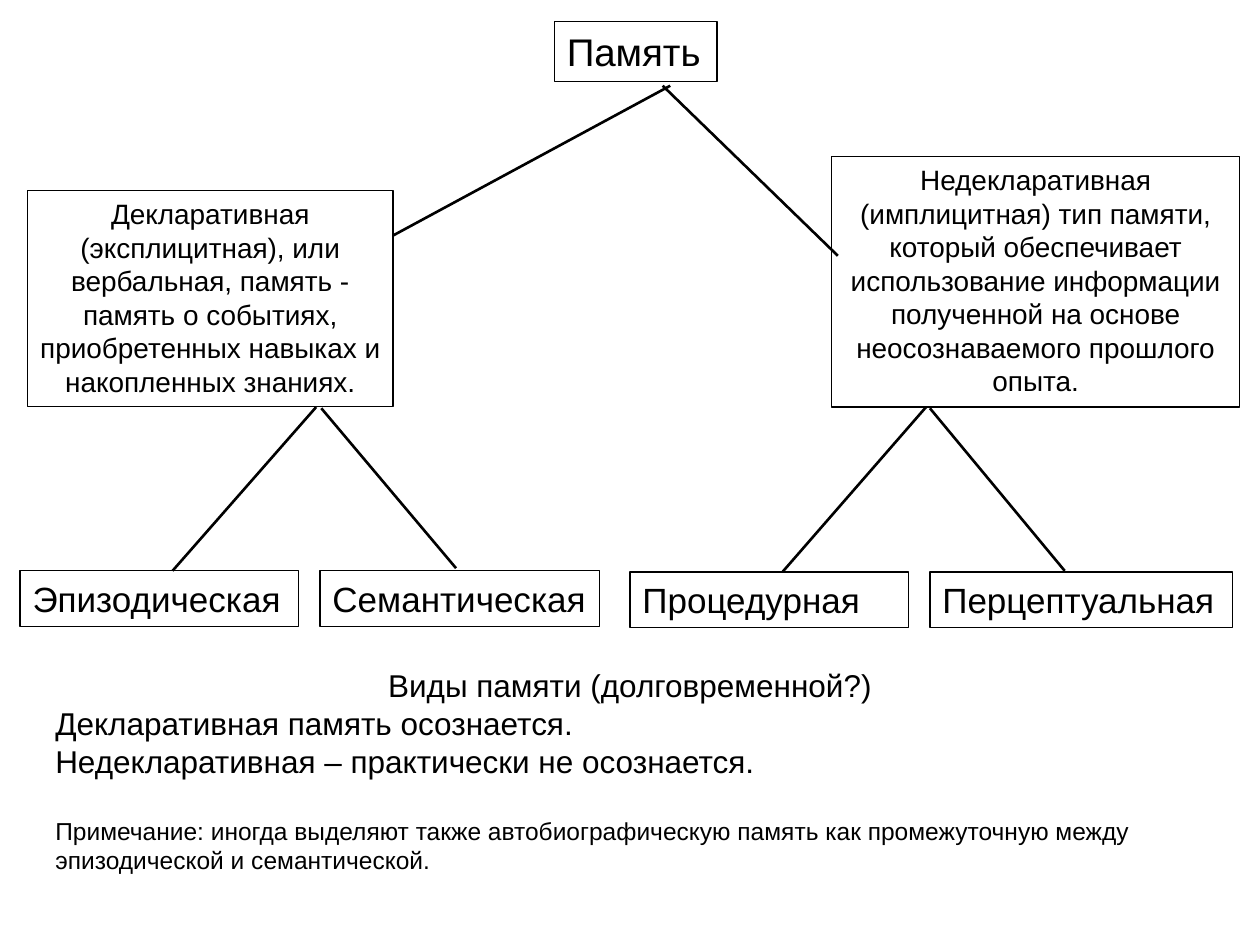
from lxml import etree
from pptx import Presentation
from pptx import util as u
from pptx.dml.color import RGBColor
from pptx.enum import shapes, text

BLACK = RGBColor(0, 0, 0)
WHITE = RGBColor(255, 255, 255)
FONT = "Arial"
LEFT = text.PP_ALIGN.LEFT
MID = text.PP_ALIGN.CENTER

TYPES = [
    ("Память", 316.8, 12.2, 92.9, 34.6, 22, LEFT),
    ("Декларативная (эксплицитная), или вербальная, память - память о "
     "событиях, приобретенных навыках и накопленных знаниях.",
     15.8, 108.7, 208.8, 123.8, 16, MID),
    ("Недекларативная (имплицитная) тип памяти, который обеспечивает "
     "использование информации полученной на основе неосознаваемого "
     "прошлого опыта.", 475.2, 89.3, 233.3, 143.3, 16, MID),
    ("Эпизодическая", 11.5, 326.2, 159.1, 31.7, 20, LEFT),
    ("Семантическая", 182.9, 326.2, 159.8, 31.7, 20, LEFT),
    ("Процедурная", 360, 326.9, 159.1, 31.7, 20, LEFT),
    ("Перцептуальная", 531.4, 326.9, 172.8, 31.7, 20, LEFT),
]
LINKS = [
    (224.6, 134.6, 383, 49),
    (478.8, 146.2, 378.7, 49),
    (98.6, 326.2, 180.7, 232.6),
    (260.6, 324.7, 183.6, 233.3),
    (447.1, 326.9, 529.2, 232.6),
    (608.4, 326.2, 531.4, 233.3),
]
NOTES = [
    ("Виды памяти (долговременной?)", 18, MID, 0),
    ("Декларативная память осознается.", 18, LEFT, 0),
    ("Недекларативная – практически не осознается.", 18, LEFT, 0),
    ("Примечание: иногда выделяют также автобиографическую память как "
     "промежуточную между эпизодической и семантической.", 14, LEFT, 20.7),
]


def add_para(para, words, size, align, gap=0):
    para.alignment = align
    para.space_before = u.Pt(gap)
    run = para.add_run()
    run.text = words
    run.font.name = FONT
    run.font.size = u.Pt(size)
    run.font.color.rgb = BLACK


def add_box(slide, x, y, w, h, paras, edge=True):
    box = slide.shapes.add_shape(
        shapes.MSO_SHAPE.RECTANGLE, u.Pt(x), u.Pt(y), u.Pt(w), u.Pt(h))
    box.shadow.inherit = False
    box.fill.solid()
    box.fill.fore_color.rgb = WHITE
    if edge:
        box.line.color.rgb = BLACK
        box.line.width = u.Pt(0.75)
    else:
        box.line.fill.background()
    frame = box.text_frame
    frame.word_wrap = True
    frame.auto_size = text.MSO_AUTO_SIZE.SHAPE_TO_FIT_TEXT
    frame.vertical_anchor = text.MSO_ANCHOR.TOP
    for i, para in enumerate(paras):
        add_para(frame.add_paragraph() if i else frame.paragraphs[0], *para)


def add_link(slide, *ends):
    link = slide.shapes.add_connector(
        shapes.MSO_CONNECTOR.STRAIGHT, *map(u.Pt, ends))
    link.line.color.rgb = BLACK
    link.line.width = u.Pt(1.5)
    props = link._element.spPr
    etree.SubElement(props, "{%s}effectLst" % props.nsmap["a"])


def main():
    deck = Presentation()
    deck.slide_width, deck.slide_height = u.Pt(720), u.Pt(540)
    slide = deck.slides.add_slide(deck.slide_layouts[6])
    for words, x, y, w, h, size, align in TYPES:
        add_box(slide, x, y, w, h, [(words, size, align)])
    for ends in LINKS:
        add_link(slide, *ends)
    add_box(slide, 24.5, 377.3, 671, 128.2, NOTES, edge=False)
    deck.save("out.pptx")


if __name__ == "__main__":
    main()
